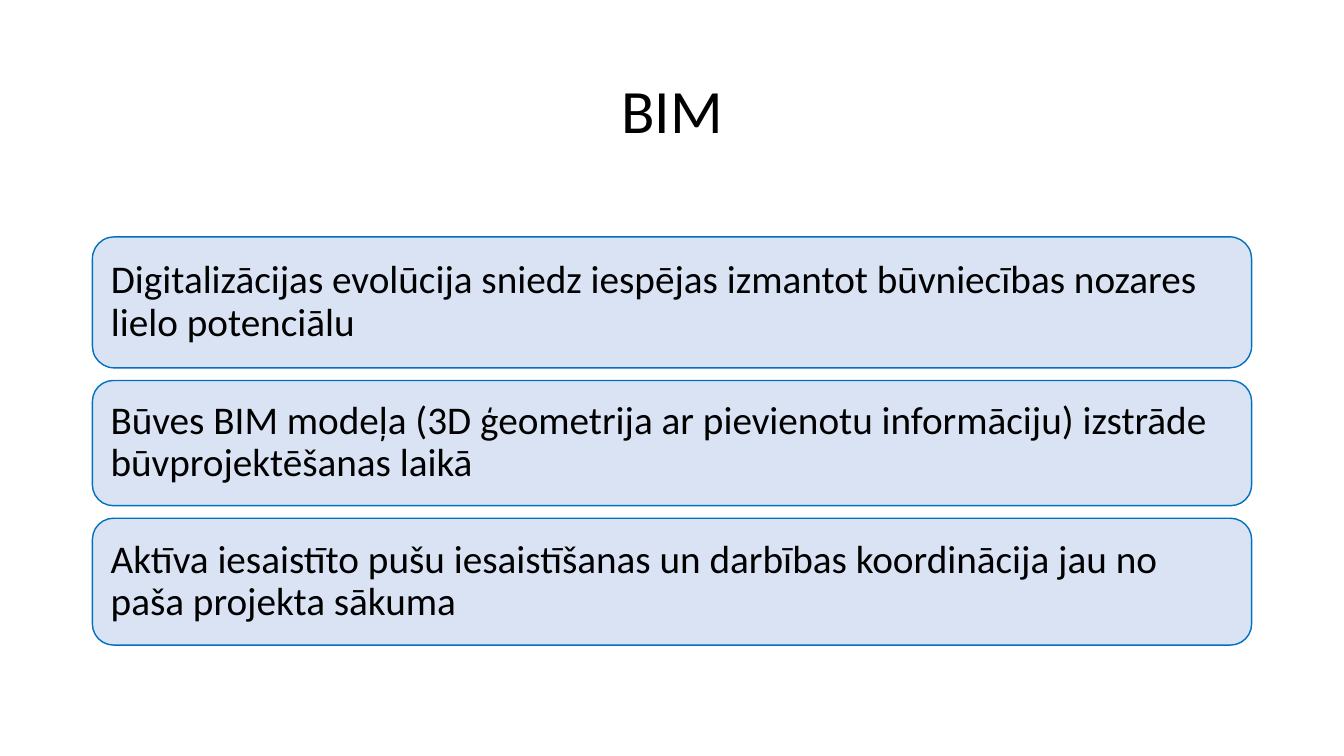
from dataclasses import dataclass

from pptx import Presentation
from pptx.dml.color import RGBColor
from pptx.enum.shapes import MSO_SHAPE
from pptx.enum.text import MSO_ANCHOR, MSO_AUTO_SIZE, PP_ALIGN
from pptx.slide import Slide
from pptx.text.text import TextFrame
from pptx.util import Inches, Pt

COLORS = {"text": "000000", "card": "DAE3F3", "border": "0070C0"}
FONT = "Calibri"
COLS, ROWS = 160, 90
LEFT, WIDTH = 11, 138
TITLE_TOP, TITLE_HEIGHT = 4.8, 17.4
CARDS_TOP, CARD_GAP = 28.2, 1.5

prs = Presentation()
prs.slide_width, prs.slide_height = Inches(13.33), Inches(7.5)


@dataclass
class Card:
    rows: float
    text: str


CARDS = [
    Card(15.6, "Digitalizācijas evolūcija sniedz iespējas izmantot būvniecības nozares lielo potenciālu"),
    Card(14.9, "Būves BIM modeļa (3D ģeometrija ar pievienotu informāciju) izstrāde būvprojektēšanas laikā"),
    Card(15.1, "Aktīva iesaistīto pušu iesaistīšanas un darbības koordinācija jau no paša projekta sākuma"),
]


def color(name: str) -> RGBColor:
    return RGBColor.from_string(COLORS[name])


def across(cols: float) -> int:
    return round(prs.slide_width * cols / COLS)


def down(rows: float) -> int:
    return round(prs.slide_height * rows / ROWS)


def write(tf: TextFrame, text: str, size: int, align: PP_ALIGN) -> None:
    tf.word_wrap = True
    tf.auto_size = MSO_AUTO_SIZE.NONE
    tf.vertical_anchor = MSO_ANCHOR.MIDDLE
    p = tf.paragraphs[0]
    p.alignment = align
    p.line_spacing = 0.9
    p.space_before = Pt(0)
    r = p.add_run()
    r.text = text
    r.font.name = FONT
    r.font.size = Pt(size)
    r.font.color.rgb = color("text")


def add_title(s: Slide, text: str) -> None:
    sp = s.shapes.title
    sp.left, sp.top = across(LEFT), down(TITLE_TOP)
    sp.width, sp.height = across(WIDTH), down(TITLE_HEIGHT)
    write(sp.text_frame, text, 44, PP_ALIGN.CENTER)


def add_card(s: Slide, card: Card, top: float) -> None:
    sp = s.shapes.add_shape(
        MSO_SHAPE.ROUNDED_RECTANGLE, across(LEFT), down(top), across(WIDTH), down(card.rows)
    )
    sp.shadow.inherit = False
    sp.fill.solid()
    sp.fill.fore_color.rgb = color("card")
    sp.line.color.rgb = color("border")
    sp.line.width = Pt(1)
    tf = sp.text_frame
    tf.margin_left = tf.margin_right = tf.margin_top = tf.margin_bottom = Inches(0.12)
    write(tf, card.text, 28, PP_ALIGN.LEFT)


def main() -> None:
    s = prs.slides.add_slide(prs.slide_layouts[5])
    add_title(s, "BIM")
    top = CARDS_TOP
    for card in CARDS:
        add_card(s, card, top)
        top += card.rows + CARD_GAP
    prs.save("out.pptx")


if __name__ == "__main__":
    main()
